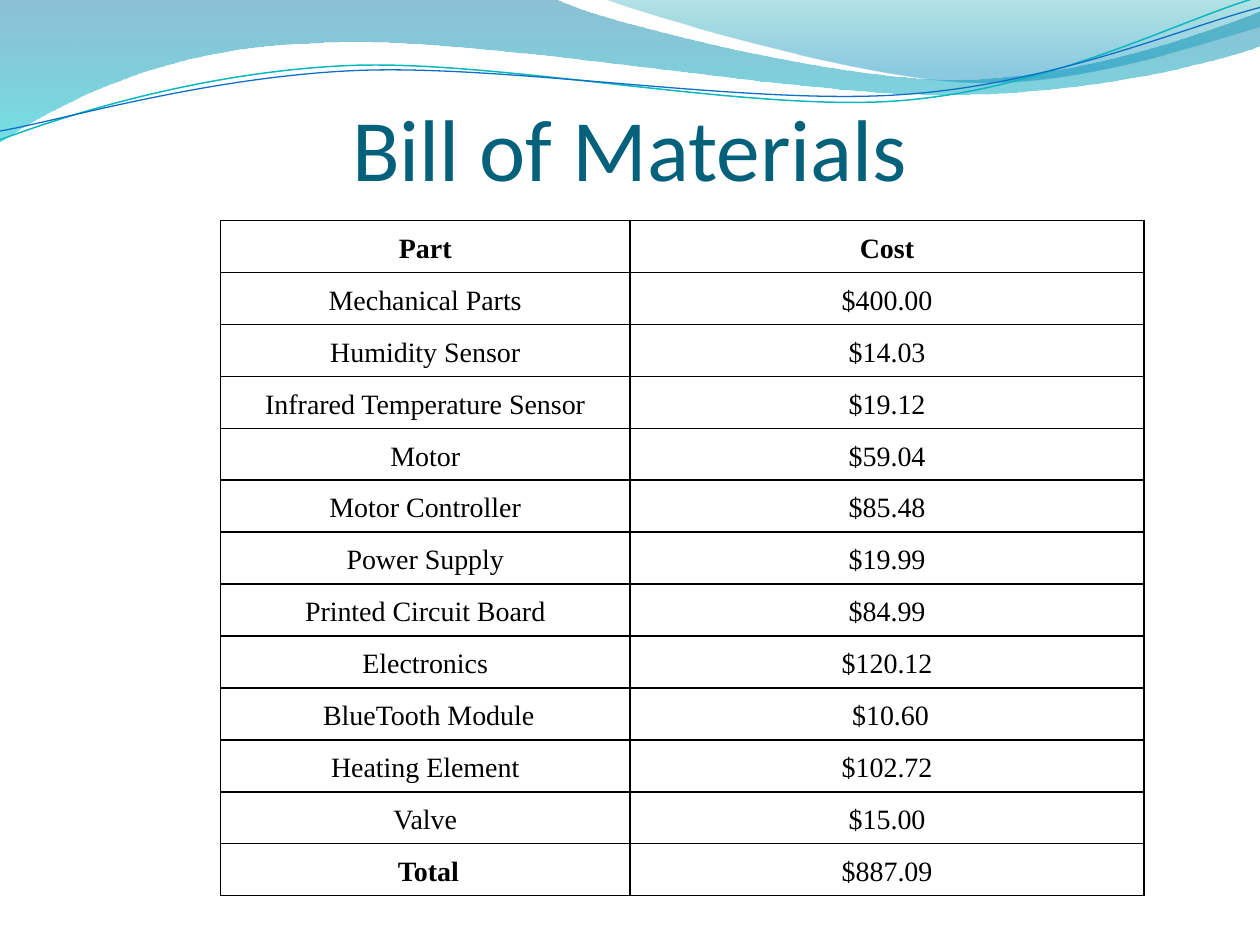
from dataclasses import dataclass
from math import cos, radians, sin

from lxml.etree import SubElement as Sub
from pptx import Presentation
from pptx.dml.color import RGBColor as Rgb
from pptx.enum.text import MSO_ANCHOR as Anchor, PP_ALIGN as Align
from pptx.oxml.ns import qn
from pptx.util import Emu, Inches, Pt

UNIT = Inches(1)
COLS, ROWS = 10, 7.5
TILT = 2.7
HUES = {
    "title": "04617B", "text": "000000", "teal": "0AB8BF", "blue": "0F6FC6",
    "deep": "0074A1", "aqua": "00C6CF", "sea": "00A1A9", "sky": "008BBF",
}
BILL = [
    ("Part", "Cost"),
    ("Mechanical Parts", "$400.00"),
    ("Humidity Sensor", "$14.03"),
    ("Infrared Temperature Sensor", "$19.12"),
    ("Motor", "$59.04"),
    ("Motor Controller", "$85.48"),
    ("Power Supply", "$19.99"),
    ("Printed Circuit Board", "$84.99"),
    ("Electronics", "$120.12"),
    (" BlueTooth Module", " $10.60"),
    ("Heating Element", "$102.72"),
    ("Valve", "$15.00"),
    (" Total", "$887.09"),
]
BOLD = {"Part", "Cost", "Total"}


@dataclass
class Stop:
    at: float
    hue: str
    alpha: int


@dataclass
class Wave:
    start: tuple
    legs: list
    stops: tuple


@dataclass
class Curl:
    start: tuple
    legs: list
    hub: tuple
    hue: str
    width: float


WAVES = [
    Wave((0, 0), [
        (4.4, -0.01),
        (4.76, 0.17, 6.64, 0.63, 7.58, 0.63),
        (8.53, 0.63, 9.58, 0.26, 10, 0.09),
        (10.01, 0.36),
        (9.83, 0.44, 8.7, 0.76, 7.46, 0.75),
        (6.22, 0.75, 3.82, 0.28, 2.57, 0.34),
        (1.29, 0.36, 0.46, 0.83, -0.01, 1.13),
        (0, 0),
    ], (Stop(0, "deep", 45), Stop(1, "aqua", 55))),
    Wave((4.79, -0.01), [
        (5.09, 0.11, 6.82, 0.62, 7.69, 0.65),
        (8.56, 0.69, 9.61, 0.32, 10, 0.21),
        (10, 0),
        (4.79, -0.01),
    ], (Stop(0, "sea", 30), Stop(0.8, "sky", 45))),
]
CURLS = [
    Curl((0, 1.11), [
        (0.48, 0.93, 1.58, 0.57, 2.77, 0.52),
        (3.95, 0.47, 5.93, 0.89, 7.13, 0.8),
        (8.33, 0.71, 9.38, 0.15, 9.98, -0.02),
    ], (4.99, 0.57), "teal", 0.85),
    Curl((0, 1.04), [
        (0.47, 0.96, 1.64, 0.61, 2.83, 0.56),
        (4.03, 0.51, 5.97, 0.84, 7.17, 0.75),
        (8.36, 0.67, 9.41, 0.21, 10, 0.06),
    ], (5, 0.59), "blue", 0.75),
]


def span(count: float) -> Emu:
    return Emu(round(count * UNIT))


def tint(name: str) -> Rgb:
    return Rgb.from_string(HUES[name])


def pairs(leg: tuple) -> list:
    return list(zip(leg[::2], leg[1::2]))


def turn(spot: tuple, hub: tuple) -> tuple:
    x, y = spot[0] - hub[0], spot[1] - hub[1]
    c, s = cos(radians(TILT)), sin(radians(TILT))
    return hub[0] + x * c - y * s, hub[1] + x * s + y * c


def trace(slide, start: tuple, legs: list, close: bool):
    spots = [start] + [spot for leg in legs for spot in pairs(leg)]
    spots = [(span(x), span(y)) for x, y in spots]
    pen = slide.shapes.build_freeform(*spots[0])
    pen.add_line_segments(spots[1:], close=close)
    shape = pen.convert_to_shape()
    shape.shadow.inherit = False
    lines = iter(shape._element.xpath(".//a:lnTo"))
    for leg in legs:
        line = next(lines)
        if len(leg) == 6:
            line.tag = qn("a:cubicBezTo")
            for other in (next(lines), next(lines)):
                line.append(other[0])
                other.getparent().remove(other)
    return shape


def draw_wave(slide, wave: Wave) -> None:
    shape = trace(slide, wave.start, wave.legs, True)
    shape.line.fill.background()
    shape.fill.gradient()
    shape.fill.gradient_angle = 270
    for mark, stop in zip(shape.fill.gradient_stops, wave.stops):
        mark.position = stop.at
        mark.color.rgb = tint(stop.hue)
    for node, stop in zip(shape._element.xpath(".//a:gs/a:srgbClr"), wave.stops):
        Sub(node, qn("a:alpha"), val=str(stop.alpha * 1000))


def draw_curl(slide, curl: Curl) -> None:
    legs = [sum((turn(spot, curl.hub) for spot in pairs(leg)), ()) for leg in curl.legs]
    shape = trace(slide, turn(curl.start, curl.hub), legs, False)
    shape.rotation = 360 - TILT
    shape.fill.background()
    shape.line.color.rgb = tint(curl.hue)
    shape.line.width = Pt(curl.width)


def style(para, font: str, size: float, hue: str, bold: bool = False) -> None:
    para.alignment = Align.CENTER
    for run in para.runs:
        run.font.name = font
        run.font.size = Pt(size)
        run.font.bold = bold
        run.font.color.rgb = tint(hue)


def draw_title(slide, text: str) -> None:
    box = slide.shapes.add_textbox(span(0.5), span(0.33), span(COLS - 1), span(1.25))
    frame = box.text_frame
    frame.word_wrap = True
    frame.vertical_anchor = Anchor.BOTTOM
    frame.margin_left = frame.margin_right = frame.margin_bottom = 0
    frame.margin_top = span(0.05)
    frame.text = text
    style(frame.paragraphs[0], "Calibri", 50, "title")


def edge(cell) -> None:
    props = cell._tc.get_or_add_tcPr()
    for side in "LRTB":
        line = Sub(props, qn(f"a:ln{side}"), w=str(Pt(1)))
        fill = Sub(line, qn("a:solidFill"))
        Sub(fill, qn("a:srgbClr"), val=HUES["text"])


def fill_cell(cell, text: str) -> None:
    edge(cell)
    cell.fill.background()
    cell.vertical_anchor = Anchor.MIDDLE
    cell.margin_left = cell.margin_right = span(0.07)
    cell.margin_top = cell.margin_bottom = 0
    cell.text_frame.text = text
    para = cell.text_frame.paragraphs[0]
    para.line_spacing = 1.15
    style(para, "Times New Roman", 16, "text", text.strip() in BOLD)


def draw_bill(slide, rows: list) -> None:
    wide, high = (3.25, 4.08), 5.36
    grid = slide.shapes.add_table(len(rows), len(wide), span(1.75), span(1.75),
                                  span(sum(wide)), span(high)).table
    grid.first_row = grid.horz_banding = False
    for col, width in zip(grid.columns, wide):
        col.width = span(width)
    for row, texts in zip(grid.rows, rows):
        row.height = span(high / len(rows))
        for cell, text in zip(row.cells, texts):
            fill_cell(cell, text)


def main() -> None:
    deck = Presentation()
    deck.slide_width, deck.slide_height = span(COLS), span(ROWS)
    slide = deck.slides.add_slide(deck.slide_layouts[6])
    for wave in WAVES:
        draw_wave(slide, wave)
    for curl in CURLS:
        draw_curl(slide, curl)
    draw_title(slide, "Bill of Materials")
    draw_bill(slide, BILL)
    deck.save("out.pptx")


if __name__ == "__main__":
    main()
